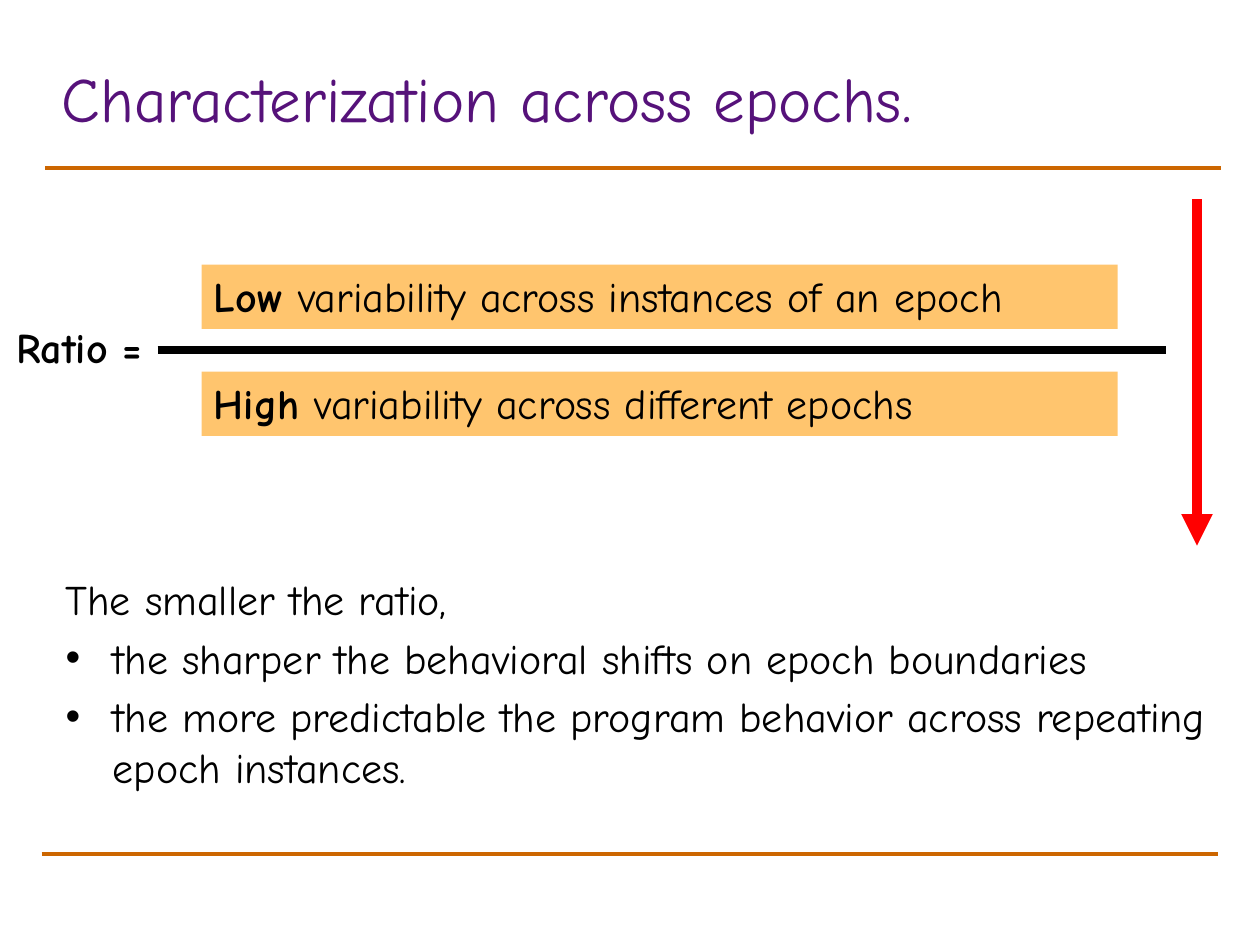
import lxml.etree
import pptx
import pptx.dml.color
import pptx.enum.shapes
import pptx.enum.text
import pptx.oxml.ns
import pptx.util

PX = 9144
qn = pptx.oxml.ns.qn
TEXT = pptx.enum.text


def color(value):
    return pptx.dml.color.RGBColor.from_string(value)


class SlideBuilder:
    font = "Comic Neue"
    black = "000000"
    rule = "CC6600"
    band = "FF9900"
    arrow = "FF0000"
    heading = "56127A"

    def __init__(self, page):
        self.page = page

    def place(self, item, left, top, width, height):
        item.left, item.top = left * PX, top * PX
        item.width, item.height = width * PX, height * PX

    def style(self, span, size=24, fill=black, bold=False):
        span.font.name = self.font
        span.font.size = pptx.util.Pt(size)
        span.font.bold = bold
        span.font.color.rgb = color(fill)

    def title(self, text, *bounds):
        box = self.page.shapes.title
        self.place(box, *bounds)
        frame = box.text_frame
        frame.text = text
        frame.auto_size = TEXT.MSO_AUTO_SIZE.NONE
        frame.vertical_anchor = TEXT.MSO_ANCHOR.MIDDLE
        para = frame.paragraphs[0]
        para.alignment = TEXT.PP_ALIGN.LEFT
        para.line_spacing = 0.8
        self.style(para.runs[0], 36, self.heading)

    def body(self, intro, points, *bounds):
        box = self.page.placeholders[1]
        self.place(box, *bounds)
        frame = box.text_frame
        frame.text = "\n".join([intro, *points])
        frame.auto_size = TEXT.MSO_AUTO_SIZE.NONE
        for para in frame.paragraphs:
            self.style(para.runs[0])
        properties = frame.paragraphs[0]._p.get_or_add_pPr()
        lxml.etree.SubElement(properties, qn("a:buNone"))

    def line(self, shapes, x1, y1, x2, y2, fill, weight, arrow=False):
        line = shapes.add_connector(
            pptx.enum.shapes.MSO_CONNECTOR.STRAIGHT, x1 * PX, y1 * PX, x2 * PX, y2 * PX
        )
        line.line.color.rgb = color(fill)
        line.line.width = pptx.util.Pt(weight)
        properties = line._element.spPr
        if arrow:
            outline = properties.find(qn("a:ln"))
            lxml.etree.SubElement(outline, qn("a:tailEnd"), type="triangle")
        lxml.etree.SubElement(properties, qn("a:effectLst"))

    def term(self, lead, rest, left, top, width, height):
        box = self.page.shapes.add_shape(
            pptx.enum.shapes.MSO_SHAPE.RECTANGLE, left * PX, top * PX, width * PX, height * PX
        )
        box.shadow.inherit = False
        box.line.fill.background()
        box.fill.solid()
        box.fill.fore_color.rgb = color(self.band)
        tint = box._element.spPr.find(qn("a:solidFill"))[0]
        lxml.etree.SubElement(tint, qn("a:alpha"), val="57000")
        frame = box.text_frame
        frame.word_wrap = True
        frame.auto_size = TEXT.MSO_AUTO_SIZE.SHAPE_TO_FIT_TEXT
        frame.vertical_anchor = TEXT.MSO_ANCHOR.TOP
        para = frame.paragraphs[0]
        para.text = lead
        para.alignment = TEXT.PP_ALIGN.LEFT
        self.style(para.runs[0], bold=True)
        span = para.add_run()
        span.text = rest
        self.style(span)

    def label(self, shapes, text, left, top, width, height):
        box = shapes.add_textbox(left * PX, top * PX, width * PX, height * PX)
        frame = box.text_frame
        frame.word_wrap = True
        frame.auto_size = TEXT.MSO_AUTO_SIZE.SHAPE_TO_FIT_TEXT
        frame.text = text
        para = frame.paragraphs[0]
        para.alignment = TEXT.PP_ALIGN.CENTER
        self.style(para.runs[0], bold=True)


def main():
    deck = pptx.Presentation()
    deck.slide_width, deck.slide_height = 1000 * PX, 750 * PX
    page = deck.slides.add_slide(deck.slide_layouts[1])
    builder = SlideBuilder(page)

    builder.line(page.shapes, 36, 133, 969, 133, builder.rule, 2.25)
    builder.line(page.shapes, 33, 678, 967, 678, builder.rule, 2.25)
    builder.title("Characterization across epochs.", 39, 37, 920, 91)

    builder.term("Low ", "variability across instances of an epoch", 160, 210, 727, 51)
    builder.term("High ", "variability across different epochs", 160, 295, 727, 51)
    ratio = page.shapes.add_group_shape()
    builder.line(ratio.shapes, 125, 278, 925, 278, builder.black, 4.5)
    builder.label(ratio.shapes, "Ratio =", -8, 250, 142, 51)

    builder.line(page.shapes, 950, 158, 950, 433, builder.arrow, 6, arrow=True)
    builder.body(
        "The smaller the ratio,",
        [
            "the sharper the behavioral shifts on epoch boundaries",
            "the more predictable the program behavior across repeating epoch instances.",
        ],
        42, 450, 925, 183,
    )
    deck.save("out.pptx")


if __name__ == "__main__":
    main()
